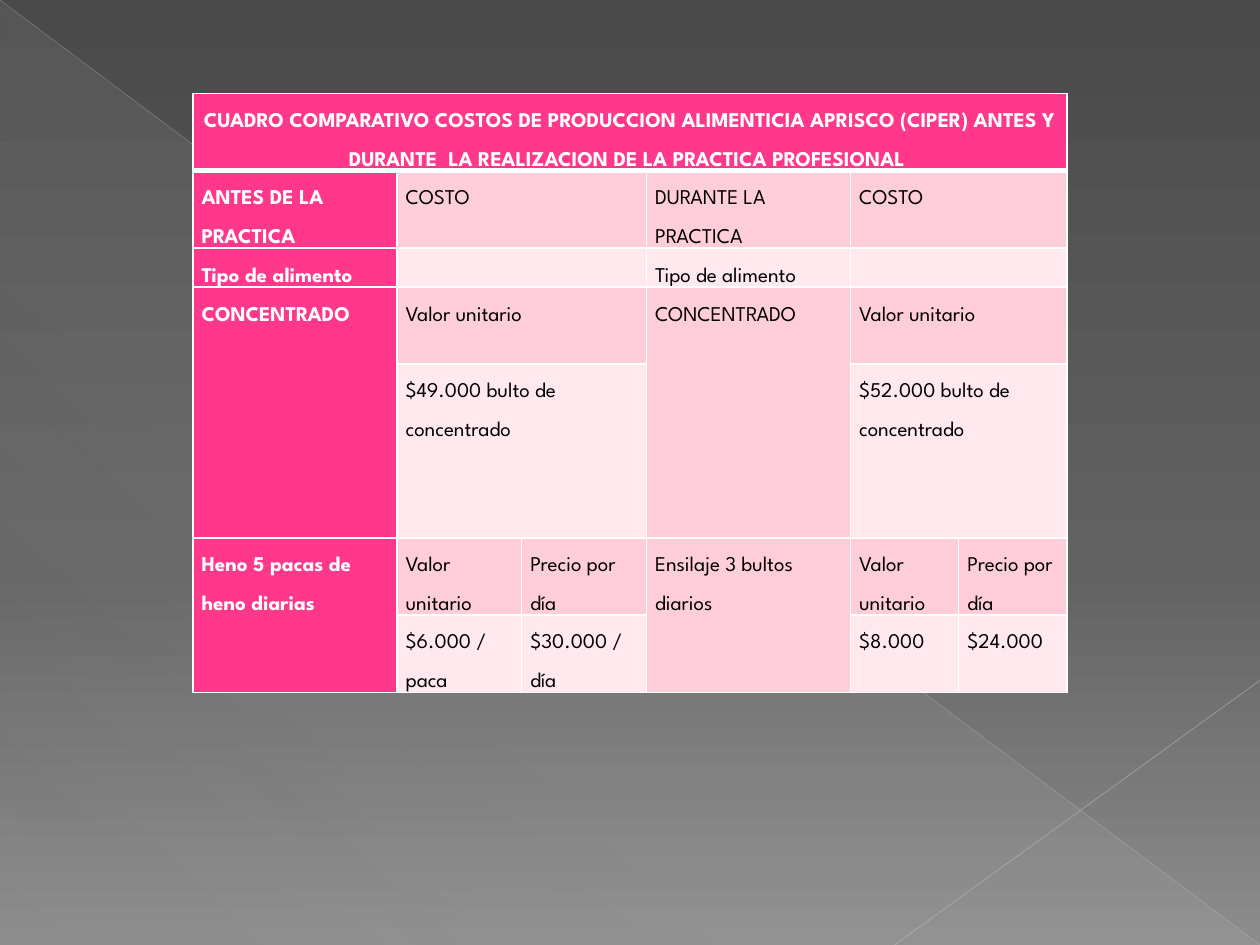
from lxml.etree import SubElement
from pptx import Presentation
from pptx.dml.color import RGBColor
from pptx.enum.shapes import MSO_CONNECTOR, MSO_SHAPE
from pptx.enum.text import PP_ALIGN
from pptx.oxml.ns import qn
from pptx.util import Inches, Pt

WIDTH, HEIGHT = 10, 7.5
PINK = RGBColor(0xFF, 0x38, 0x8C)
ROSE = RGBColor(0xFF, 0xCE, 0xDA)
BLUSH = RGBColor(0xFF, 0xE8, 0xEE)
WHITE = RGBColor(0xFF, 0xFF, 0xFF)
BLACK = RGBColor(0, 0, 0)
CHARCOAL = RGBColor(0x4A, 0x4A, 0x4A)
GRAPHITE = RGBColor(0x62, 0x62, 0x62)
STEEL = RGBColor(0x8C, 0x8C, 0x8C)
MIST = RGBColor(0xD2, 0xD2, 0xD2)
SILVER = RGBColor(0xBF, 0xBF, 0xBF)
PEARL = RGBColor(0xC6, 0xC6, 0xC6)

COLUMNS = [1.62, 0.99, 0.99, 1.62, 0.86, 0.86]
ROWS = [0.61, 0.61, 0.31, 0.61, 1.38, 0.61, 0.61]

# (row, column, rows spanned, columns spanned, text)
COST_CELLS = [
    (0, 0, 1, 6, "CUADRO COMPARATIVO COSTOS DE PRODUCCION ALIMENTICIA APRISCO "
                 "(CIPER) ANTES Y DURANTE  LA REALIZACION DE LA PRACTICA PROFESIONAL "),
    (1, 0, 1, 1, "ANTES DE LA PRACTICA"),
    (1, 1, 1, 2, "COSTO"),
    (1, 3, 1, 1, "DURANTE LA PRACTICA"),
    (1, 4, 1, 2, "COSTO"),
    (2, 0, 1, 1, "Tipo de alimento"),
    (2, 1, 1, 2, ""),
    (2, 3, 1, 1, "Tipo de alimento"),
    (2, 4, 1, 2, ""),
    (3, 0, 2, 1, "CONCENTRADO"),
    (3, 1, 1, 2, "Valor unitario"),
    (3, 3, 2, 1, "CONCENTRADO"),
    (3, 4, 1, 2, "Valor unitario"),
    (4, 1, 1, 2, "$49.000 bulto de concentrado"),
    (4, 4, 1, 2, "$52.000 bulto de concentrado"),
    (5, 0, 2, 1, "Heno 5 pacas de heno diarias"),
    (5, 1, 1, 1, "Valor unitario"),
    (5, 2, 1, 1, "Precio por día"),
    (5, 3, 2, 1, "Ensilaje 3 bultos diarios"),
    (5, 4, 1, 1, "Valor unitario"),
    (5, 5, 1, 1, "Precio por día"),
    (6, 1, 1, 1, "$6.000 / paca"),
    (6, 2, 1, 1, "$30.000 / día"),
    (6, 4, 1, 1, "$8.000"),
    (6, 5, 1, 1, "$24.000"),
]


def add_color(parent, color, opacity=100):
    tone = SubElement(parent, qn("a:srgbClr"), val=str(color))
    if opacity < 100:
        SubElement(tone, qn("a:alpha"), val=str(opacity * 1000))


def set_gradient(properties, stops, angle):
    """Turn the solid fill of a properties element into a gradient."""
    solid = properties.find(qn("a:solidFill"))
    gradient = SubElement(properties, qn("a:gradFill"), rotWithShape="1")
    stop_list = SubElement(gradient, qn("a:gsLst"))
    for position, color, opacity in stops:
        stop = SubElement(stop_list, qn("a:gs"), pos=str(position * 1000))
        add_color(stop, color, opacity)
    SubElement(gradient, qn("a:lin"), ang=str(angle * 60000), scaled="0")
    properties.replace(solid, gradient)


class SlideBuilder:
    font = "League Spartan"
    size = Pt(12)

    def __init__(self, slide):
        self.slide = slide

    def x(self, share):
        return Inches(WIDTH * share)

    def y(self, share):
        return Inches(HEIGHT * share)

    def background(self, stops, angle):
        fill = self.slide.background.fill
        fill.solid()
        fill.fore_color.rgb = CHARCOAL
        set_gradient(self.slide.element.find(".//" + qn("p:bgPr")), stops, angle)

    def triangle(self, left, top, width, height, stops, angle):
        shape = self.slide.shapes.add_shape(
            MSO_SHAPE.RIGHT_TRIANGLE,
            self.x(left), self.y(top), self.x(width), self.y(height))
        shape.shadow.inherit = False
        shape.line.fill.background()
        shape.fill.solid()
        shape.fill.fore_color.rgb = MIST
        set_gradient(shape.element.spPr, stops, angle)

    def line(self, start, end, color, weight, opacity):
        connector = self.slide.shapes.add_connector(
            MSO_CONNECTOR.STRAIGHT, self.x(start[0]), self.y(start[1]),
            self.x(end[0]), self.y(end[1]))
        connector.line.width = Pt(weight)
        connector.line.color.rgb = color
        properties = connector.element.spPr
        tone = properties.find(".//" + qn("a:srgbClr"))
        SubElement(tone, qn("a:alpha"), val=str(opacity * 1000))
        SubElement(properties, qn("a:effectLst"))

    def table(self, left, top, columns, rows, contents):
        table = self.slide.shapes.add_table(
            len(rows), len(columns), self.x(left), self.y(top),
            Inches(sum(columns)), Inches(sum(rows))).table
        table.first_row = table.horz_banding = False
        for column, width in zip(table.columns, columns):
            column.width = Inches(width)
        for row, height in zip(table.rows, rows):
            row.height = Inches(height)
        for row in range(len(rows)):
            for column in range(len(columns)):
                self.cell(table.cell(row, column), row, column)
        for row, column, row_span, column_span, text in contents:
            cell = table.cell(row, column)
            if row_span * column_span > 1:
                cell.merge(table.cell(row + row_span - 1, column + column_span - 1))
            if text:
                self.cell_text(cell, text, row == 0 or column == 0, row == 0)

    def cell(self, cell, row, column):
        cell.margin_left = cell.margin_right = Inches(0.07)
        cell.margin_top = cell.margin_bottom = 0
        cell.fill.solid()
        heading = row == 0 or column == 0
        cell.fill.fore_color.rgb = PINK if heading else ROSE if row % 2 else BLUSH
        paragraph = cell.text_frame.paragraphs[0]
        SubElement(paragraph._p, qn("a:endParaRPr"), sz=str(int(self.size.pt * 100)))
        # White borders, heavier below the title row
        weights = {"L": 1, "R": 1, "T": 3 if row == 1 else 1, "B": 3 if row == 0 else 1}
        properties = cell._tc.get_or_add_tcPr()
        for place, (side, weight) in enumerate(weights.items()):
            border = SubElement(properties, qn("a:ln" + side), w=str(Pt(weight)))
            add_color(SubElement(border, qn("a:solidFill")), WHITE)
            properties.insert(place, border)

    def cell_text(self, cell, text, heading, centered):
        paragraph = cell.text_frame.paragraphs[0]
        paragraph.line_spacing = 2.0
        paragraph.alignment = PP_ALIGN.CENTER if centered else PP_ALIGN.LEFT
        run = paragraph.add_run()
        run.text = text
        run.font.name = self.font
        run.font.size = self.size
        run.font.bold = heading
        run.font.color.rgb = WHITE if heading else BLACK


def main():
    deck = Presentation()
    deck.slide_width, deck.slide_height = Inches(WIDTH), Inches(HEIGHT)
    builder = SlideBuilder(deck.slides.add_slide(deck.slide_layouts[6]))

    # Backdrop: grey gradient, pale triangle and two diagonals
    builder.background([(0, CHARCOAL, 100), (60, GRAPHITE, 100), (100, STEEL, 100)], 90)
    builder.triangle(0, 0, 1, 1, [(0, MIST, 10), (70, MIST, 8), (100, MIST, 1)], 133)
    builder.line((0, 0), (1, 1), SILVER, 0.39, 35)
    builder.line((1, 0.72), (0.71, 1), PEARL, 0.47, 45)

    # Feed cost comparison
    builder.table(0.153, 0.099, COLUMNS, ROWS, COST_CELLS)

    deck.save("out.pptx")


if __name__ == "__main__":
    main()
